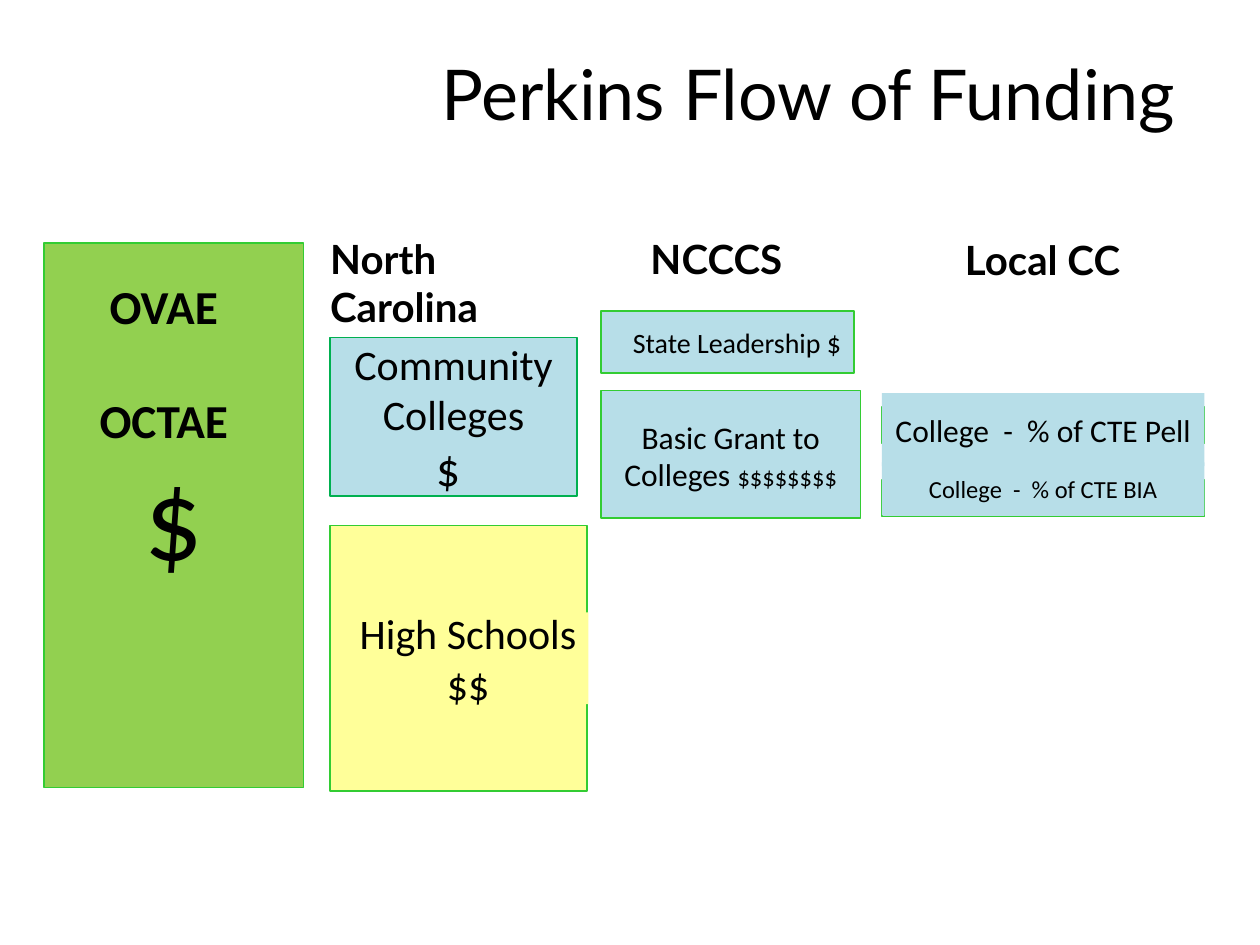
from pptx import Presentation
from pptx.dml.color import RGBColor
from pptx.enum.shapes import MSO_SHAPE
from pptx.enum.text import MSO_ANCHOR, PP_ALIGN
from pptx.util import Inches, Pt

BLACK = RGBColor(0, 0, 0)
GREEN = RGBColor(0x92, 0xD0, 0x50)
YELLOW = RGBColor(0xFF, 0xFF, 0x99)
BLUE = RGBColor(0xB7, 0xDE, 0xE8)
EDGE = RGBColor(0x33, 0xCC, 0x33)
DARK = RGBColor(0x00, 0xB0, 0x50)


def write(shape, lines, font="Calibri", bold=False, align=PP_ALIGN.CENTER,
          anchor=MSO_ANCHOR.MIDDLE, inset=0, gap=0):
    """Fill a shape with paragraphs given as (text, size) pairs."""
    frame = shape.text_frame
    frame.word_wrap = True
    frame.vertical_anchor = anchor
    frame.margin_left = frame.margin_right = Inches(inset)
    frame.margin_top = frame.margin_bottom = Inches(inset)
    for i, (text, size) in enumerate(lines):
        para = frame.add_paragraph() if i else frame.paragraphs[0]
        para.text = text
        para.alignment = align
        if i and gap:
            para.space_before = Pt(gap)
        face = para.font
        face.name, face.size, face.bold = font, Pt(size), bold
        face.color.rgb = BLACK
    return frame


def panel(slide, box, fill, edge=None):
    """Draw a filled rectangle, outlined if an edge colour is given."""
    shape = slide.shapes.add_shape(MSO_SHAPE.RECTANGLE, *map(Inches, box))
    shape.shadow.inherit = False
    shape.fill.solid()
    shape.fill.fore_color.rgb = fill
    if edge is None:
        shape.line.fill.background()
    else:
        shape.line.color.rgb = edge
        shape.line.width = Pt(1)
    return shape


def label(slide, box, lines, **style):
    """Place a text box."""
    shape = slide.shapes.add_textbox(*map(Inches, box))
    return write(shape, lines, **style)


def header(slide, box, text, align=PP_ALIGN.CENTER):
    """Place a bold column heading."""
    label(slide, box, [(text, 23)], font="Lato", bold=True, align=align,
          anchor=MSO_ANCHOR.TOP, inset=0.04)


def title(slide, box):
    """Move and format the title placeholder."""
    shape = slide.shapes.title
    shape.left, shape.top, shape.width, shape.height = map(Inches, box)
    write(shape, [("Perkins Flow of Funding", 40)], font="Lato", inset=0.05)


def federal(slide, box):
    """Draw the federal office column."""
    x, y, w, h = box
    panel(slide, box, GREEN, EDGE)
    label(slide, (x, y + 1.57, w, 1.17), [("$", 66)])
    label(slide, (x + 0.32, y + 0.27, 1.26, 1.36),
          [("OVAE", 27), ("OCTAE", 27)], bold=True, gap=33)


def state(slide, box):
    """Draw the state column with its two shares."""
    x, y, w, h = box
    header(slide, (x - 0.04, y, 2.08, 0.46), "North Carolina", PP_ALIGN.LEFT)
    share = panel(slide, (x, y + 0.86, 1.96, 1.26), BLUE, DARK)
    write(share, [("Community Colleges", 24), ("$ ", 27)])
    panel(slide, (x, y + 2.35, w, h - 2.35), YELLOW, EDGE)
    school = panel(slide, (x + 0.14, y + 3.04, 1.91, 0.73), YELLOW)
    write(school, [("High Schools", 24), ("$$", 24)])


def system(slide, box):
    """Draw the college system column."""
    x, y, w, h = box
    header(slide, (x, y, 1.91, 0.48), "NCCCS ")
    panel(slide, (x, y + 0.65, 2.01, 0.49), BLUE, EDGE)
    label(slide, (x, y + 0.78, 2.16, 0.24), [("State Leadership $", 16)])
    panel(slide, (x, y + 1.28, w, h - 1.28), BLUE, EDGE)
    frame = label(slide, (x, y + 1.49, w, 0.61),
                  [("Basic Grant to Colleges ", 18)])
    run = frame.paragraphs[0].add_run()
    run.text = "$$$$$$$$"
    run.font.size = Pt(14)


def local(slide, box):
    """Draw the local college column."""
    x, y, w, h = box
    header(slide, (x + 0.32, y, 1.91, 0.48), "Local CC")
    rows = [("College  -  % of CTE Pell", 18, 1.4, 1.29, 0.58),
            ("College  -  % of CTE BIA", 14, 1.98, 1.84, 0.42)]
    for text, size, back, front, tall in rows:
        panel(slide, (x, y + back, w, 0.29), BLUE, EDGE)
        cover = panel(slide, (x, y + front, w, tall), BLUE)
        write(cover, [(text, size)])


def main():
    """Build and save the slide."""
    deck = Presentation()
    deck.slide_width, deck.slide_height = Inches(10), Inches(7.5)
    slide = deck.slides.add_slide(deck.slide_layouts[5])
    title(slide, (3.08, 0.22, 6.67, 1.03))
    federal(slide, (0.35, 1.93, 2.06, 4.32))
    state(slide, (2.62, 1.82, 2.04, 4.46))
    system(slide, (4.77, 1.82, 2.06, 2.29))
    local(slide, (7, 1.83, 2.56, 2.27))
    deck.save("out.pptx")


if __name__ == "__main__":
    main()
